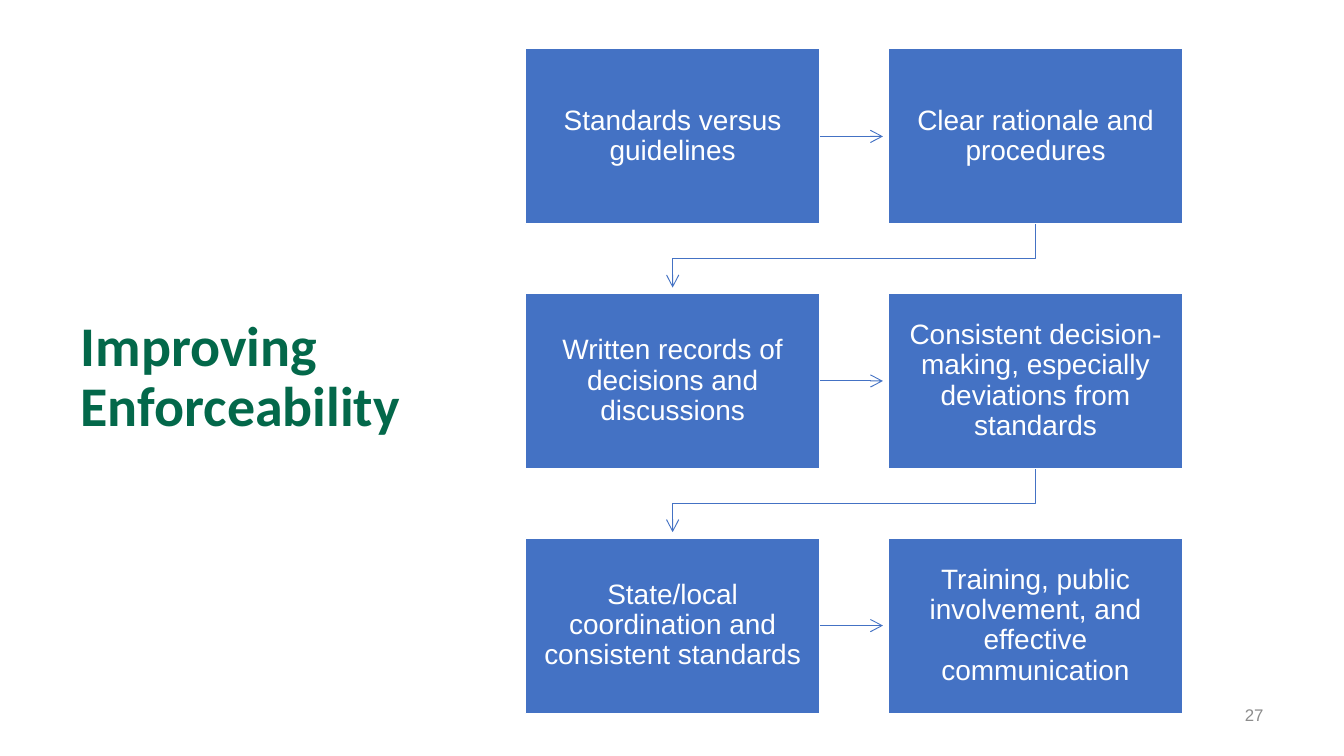
from pptx import Presentation
from pptx.dml.color import RGBColor
from pptx.enum.shapes import MSO_CONNECTOR as Conn, MSO_SHAPE as Shape
from pptx.enum.text import MSO_ANCHOR as Anchor, MSO_AUTO_SIZE as Auto, PP_ALIGN as Align
from pptx.oxml.ns import qn
from pptx.util import Inches, Pt
from lxml.etree import SubElement as Sub

hue = RGBColor.from_string


def write(shape, text, pad, align, color, gap, fonts):
    frame = shape.text_frame
    frame.text = text
    form = {"word_wrap": True, "auto_size": Auto.NONE, "vertical_anchor": Anchor.MIDDLE,
            "margin_left": Inches(pad[0]), "margin_right": Inches(pad[0]),
            "margin_top": Inches(pad[1]), "margin_bottom": Inches(pad[1])}
    for key, val in form.items():
        setattr(frame, key, val)
    para = frame.paragraphs[0]
    para.alignment = align
    para.line_spacing = gap
    for key, val in fonts.items():
        setattr(para.font, key, val)
    para.font.color.rgb = hue(color)


def arrow(line):
    line.line.color.rgb = hue(BLUE)
    line.line.width = Pt(0.5)
    props = line._element.spPr
    Sub(props.find(qn("a:ln")), qn("a:tailEnd"), type="arrow")
    Sub(props, qn("a:effectLst"))


BLUE, WHITE, GREEN, GRAY = "4472C4", "FFFFFF", "03684A", "8C8C8C"
LEFT, TOP, WIDE, HIGH = 3.91, 0.36, 2.19, 1.31
STEP_X, STEP_Y = 2.7, 1.82
STEPS = [
    ("Standards versus guidelines", "Clear rationale and procedures"),
    ("Written records of decisions and discussions",
     "Consistent decision-making, especially deviations from standards"),
    ("State/local coordination and consistent standards",
     "Training, public involvement, and effective communication"),
]

deck = Presentation()
deck.slide_width, deck.slide_height = Inches(10), Inches(10 * 9 / 16)
slide = deck.slides.add_slide(deck.slide_layouts[5])
shapes = slide.shapes

title = shapes.title
spot = {"left": 0.53, "top": 0.9, "width": 3.11, "height": 3.83}
for key, val in spot.items():
    setattr(title, key, Inches(val))
write(title, "Improving Enforceability", (0.07, 0.04), Align.LEFT, GREEN, 0.9,
      {"name": "Calibri", "size": Pt(30), "bold": True})

for row, pair in enumerate(STEPS):
    top = TOP + row * STEP_Y
    mid = top + HIGH / 2
    boxes = []
    for col, text in enumerate(pair):
        box = shapes.add_shape(Shape.RECTANGLE, Inches(LEFT + col * STEP_X), Inches(top),
                               Inches(WIDE), Inches(HIGH))
        box.shadow.inherit = False
        box.fill.solid()
        box.fill.fore_color.rgb = hue(BLUE)
        box.line.color.rgb = hue(WHITE)
        box.line.width = Pt(1)
        write(box, text, (0.11, 0.11), Align.CENTER, WHITE, 0.9,
              {"name": "Arial", "size": Pt(15)})
        boxes.append(box)

    link = shapes.add_connector(Conn.STRAIGHT, Inches(LEFT + WIDE), Inches(mid),
                                Inches(LEFT + STEP_X - 0.04), Inches(mid))
    link.begin_connect(boxes[0], 3)
    arrow(link)

    if row < len(STEPS) - 1:
        end = LEFT + WIDE / 2
        start = end + STEP_X
        base = top + HIGH
        turn = base + (STEP_Y - HIGH) / 2
        pen = shapes.build_freeform(Inches(start), Inches(base))
        bends = [(start, turn), (end, turn), (end, top + STEP_Y - 0.04)]
        pen.add_line_segments([(Inches(x), Inches(y)) for x, y in bends], close=False)
        elbow = pen.convert_to_shape()
        elbow.fill.background()
        arrow(elbow)

page = shapes.add_textbox(Inches(7.17), Inches(5.12), Inches(2.33), Inches(0.39))
write(page, "27", (0.1, 0.05), Align.RIGHT, GRAY, 1.0, {"name": "Arial", "size": Pt(9)})

deck.save("out.pptx")
